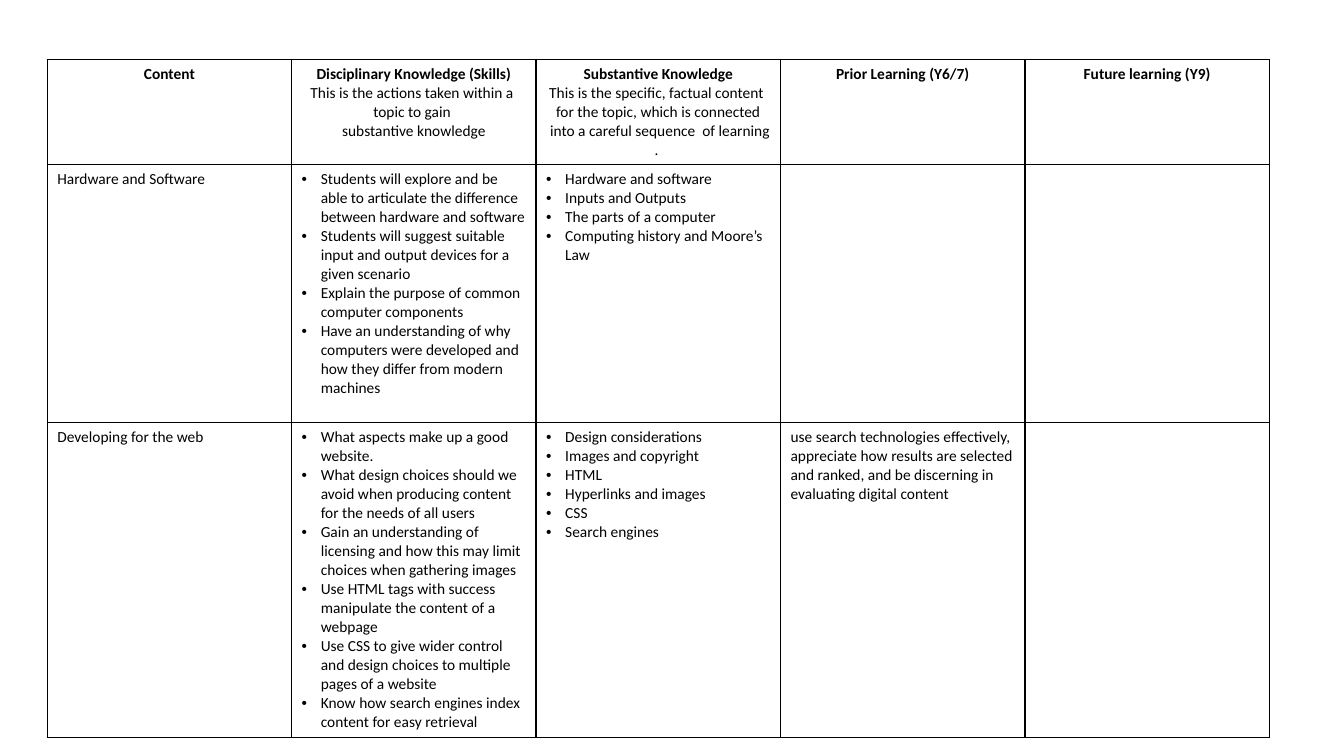
from lxml import etree
from pptx import Presentation
from pptx.dml.color import RGBColor
from pptx.enum.text import PP_ALIGN
from pptx.oxml.ns import qn
from pptx.util import Cm, Pt

LEFT, MID = PP_ALIGN.LEFT, PP_ALIGN.CENTER
BLACK, WHITE = "000000", "FFFFFF"
HARD = chr(160)


def paint(target, color):
    target.rgb = RGBColor.from_string(color)


def write(para, text, bold=False, align=LEFT, bullet=False):
    para.alignment = align
    run = para.add_run()
    run.text = text
    run.font.name = "Calibri"
    run.font.size = Pt(11)
    run.font.bold = bold
    paint(run.font.color, BLACK)
    if bullet:
        props = para._p.get_or_add_pPr()
        props.set("marL", str(Cm(0.48)))
        props.set("indent", str(-Cm(0.48)))
        etree.SubElement(props, qn("a:buFont"), typeface="Arial")
        etree.SubElement(props, qn("a:buChar"), char="•")


heads = [
    ["Content"],
    ["Disciplinary Knowledge (Skills)",
     "This is the actions taken within a ",
     "topic to gain ",
     "substantive knowledge"],
    ["Substantive Knowledge",
     "This is the specific, factual content ",
     "for the topic, which is connected",
     " into a careful sequence  of learning. "],
    ["Prior Learning (Y6/7)"],
    ["Future learning (Y9)"],
]
topics = [
    [
        ["Hardware and Software"],
        ["Students will explore and be able to articulate the difference between hardware and software",
         "Students will suggest suitable input and output devices for a given scenario",
         "Explain the purpose of common computer components",
         "Have an understanding of why computers were developed and how they differ from modern machines"],
        ["Hardware and software",
         "Inputs and Outputs",
         "The parts of a computer",
         "Computing history and Moore’s Law"],
        [],
        [],
    ],
    [
        ["Developing for the web"],
        ["What aspects make up a good website.",
         "What design choices should we avoid when producing content for the needs of all users",
         "Gain an understanding of licensing and how this may limit choices when gathering images",
         "Use HTML tags with success manipulate the content of a webpage",
         "Use CSS to give wider control and design choices to multiple pages of a website",
         "Know how search engines index content for easy retrieval"],
        ["Design considerations",
         "Images and copyright",
         "HTML",
         "Hyperlinks and images",
         "CSS",
         "Search engines"],
        ["use search technologies effectively, appreciate how results are selected and ranked, and be discerning in evaluating digital content"],
        [],
    ],
]
rows = [heads] + topics
highs = [2.65, 6.5, 7.94]

deck = Presentation()
deck.slide_width, deck.slide_height = Cm(33.87), Cm(19.05)
slide = deck.slides.add_slide(deck.slide_layouts[6])
table = slide.shapes.add_table(
    len(rows), len(heads), Cm(1.19), Cm(1.5), Cm(30.8), Cm(sum(highs))).table
table.first_row = table.horz_banding = False
for col in table.columns:
    col.width = Cm(6.16)

for y, row in enumerate(rows):
    table.rows[y].height = Cm(highs[y])
    for x, lines in enumerate(row):
        cell = table.cell(y, x)
        props = cell._tc.get_or_add_tcPr()
        for side in ("lnL", "lnR", "lnT", "lnB"):
            line = etree.SubElement(props, qn("a:" + side), w=str(Pt(1)))
            fill = etree.SubElement(line, qn("a:solidFill"))
            etree.SubElement(fill, qn("a:srgbClr"), val=BLACK)
        cell.fill.solid()
        paint(cell.fill.fore_color, WHITE)
        frame = cell.text_frame
        for i, text in enumerate(lines):
            para = frame.add_paragraph() if i else frame.paragraphs[0]
            if y == 0:
                text = text.replace(" ", HARD) if i else text
                write(para, text, bold=i == 0, align=MID)
            else:
                write(para, text, bullet=x in (1, 2))

deck.save("out.pptx")
